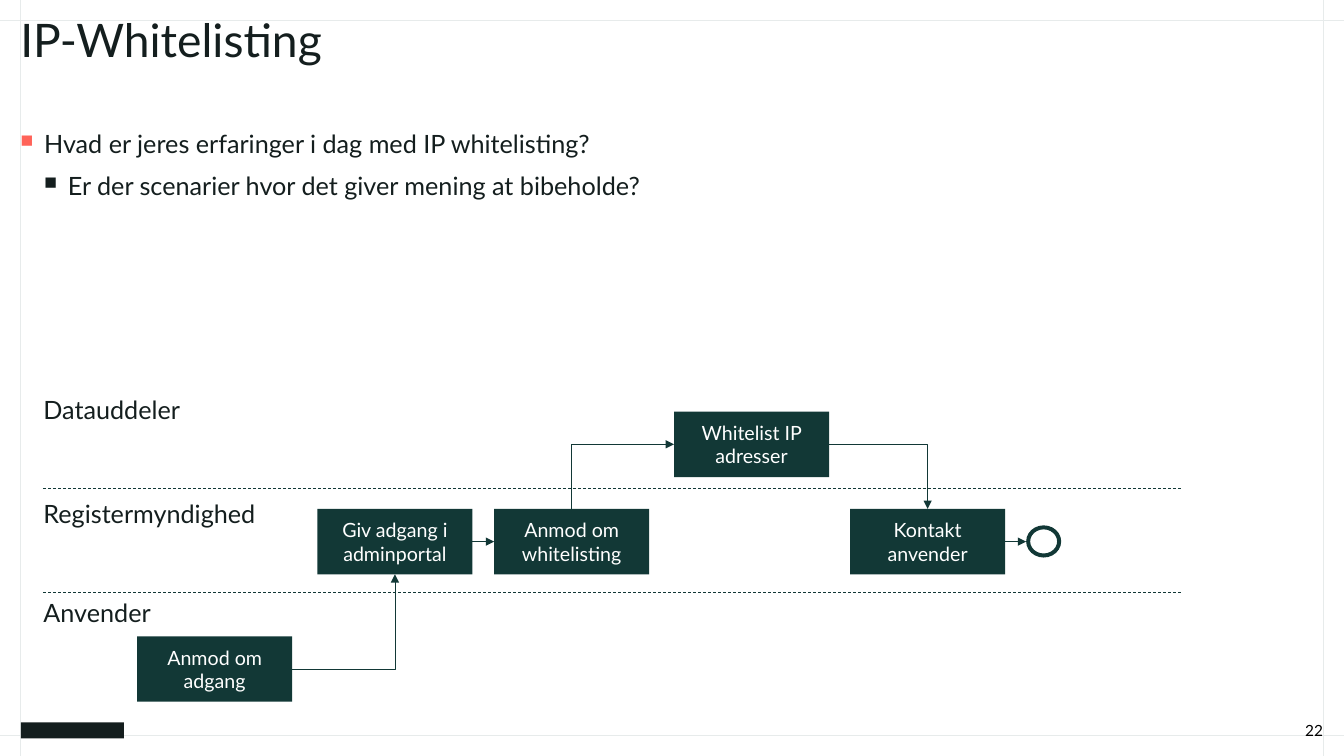
"""Build the IP-Whitelisting slide with its three-lane process flow."""
from dataclasses import dataclass

from lxml.etree import SubElement
from pptx import Presentation
from pptx.dml.color import RGBColor
from pptx.enum.dml import MSO_LINE
from pptx.enum.shapes import MSO_CONNECTOR, MSO_SHAPE
from pptx.enum.text import MSO_ANCHOR, PP_ALIGN
from pptx.oxml.ns import qn
from pptx.util import Pt


@dataclass(frozen=True)
class Theme:
    face: str = "Lato"
    ink: str = "141E1E"
    black: str = "000000"
    white: str = "FFFFFF"
    green: str = "123836"
    coral: str = "FF6359"
    guide: str = "E7EBEB"
    title: float = 33
    body: float = 18
    step: float = 14
    page: float = 11


theme = Theme()
deck = Presentation()
deck.slide_width, deck.slide_height = Pt(960), Pt(540)
slide = deck.slides.add_slide(deck.slide_layouts[6])
shapes = slide.shapes


def write(shape, lines, size, color, space=1.0, after=0, inset=(0, 0)):
    frame = shape.text_frame
    frame.word_wrap = True
    frame.margin_left = frame.margin_right = Pt(inset[0])
    frame.margin_top = frame.margin_bottom = Pt(inset[1])
    frame.text = "\n".join(lines)
    for para in frame.paragraphs:
        para.line_spacing, para.space_after = space, Pt(after)
        para.font.name, para.font.size = theme.face, Pt(size)
        para.font.color.rgb = RGBColor.from_string(color)
    return frame


def link(kind, ends, color, width=0.5, arrow=None):
    line = shapes.add_connector(kind, *[Pt(n) for n in ends])
    line.line.color.rgb = RGBColor.from_string(color)
    line.line.width = Pt(width)
    props = line._element.spPr
    SubElement(props, qn("a:effectLst"))
    if kind == MSO_CONNECTOR.ELBOW:
        props.find(qn("a:prstGeom")).set("prst", "bentConnector2")
    if arrow:
        SubElement(props.find(qn("a:ln")), qn(arrow), type="triangle")
    return line


for x in (14.75, 945):
    link(MSO_CONNECTOR.STRAIGHT, (x, 0, x, 540), theme.guide, 0.6)
for y in (14.75, 525.25):
    link(MSO_CONNECTOR.STRAIGHT, (0, y, 960, y), theme.guide, 0.6)

mark = shapes.add_shape(MSO_SHAPE.RECTANGLE, Pt(15), Pt(516), Pt(73.5), Pt(11.5))
mark.shadow.inherit = False
mark.fill.solid()
mark.fill.fore_color.rgb = RGBColor.from_string(theme.ink)
mark.line.fill.background()

title = shapes.add_textbox(Pt(14.5), Pt(14.5), Pt(931), Pt(75))
write(title, ["IP-Whitelisting"], theme.title, theme.ink, 0.83)

body = shapes.add_textbox(Pt(14.5), Pt(89.5), Pt(931), Pt(359))
points = write(body, ["Hvad er jeres erfaringer i dag med IP whitelisting?",
                      "Er der scenarier hvor det giver mening at bibeholde?"],
               theme.body, theme.ink, 1.1, 6)
for level, color in enumerate((theme.coral, theme.ink)):
    para = points.paragraphs[level]
    para.level = level
    props = para._p.get_or_add_pPr()
    props.set("marL", str(Pt(17 * (level + 1))))
    props.set("indent", str(Pt(-17)))
    font = props.find(qn("a:defRPr"))
    SubElement(SubElement(props, qn("a:buClr")), qn("a:srgbClr"), val=color)
    SubElement(props, qn("a:buSzPct"), val="70000")
    SubElement(props, qn("a:buChar"), char="■")
    props.append(font)

page = shapes.add_textbox(Pt(731.5), Pt(513), Pt(213.5), Pt(15))
foot = write(page, ["22"], theme.page, theme.black)
foot.vertical_anchor = MSO_ANCHOR.BOTTOM
foot.paragraphs[0].alignment = PP_ALIGN.RIGHT

for y in (349, 423.25):
    rule = link(MSO_CONNECTOR.STRAIGHT, (31, y, 845, y), theme.green)
    rule.line.dash_style = MSO_LINE.DASH
for name, y in (("Datauddeler", 279.5), ("Registermyndighed", 353.5),
                ("Anvender", 424.75)):
    lane = shapes.add_textbox(Pt(31), Pt(y), Pt(178), Pt(22))
    write(lane, [name], theme.body, theme.ink, 1.1, 6)

steps = []
for name, x, y in (("Anmod om adgang", 98, 454.5),
                   ("Giv adgang i adminportal", 226.75, 363.5),
                   ("Anmod om whitelisting", 353, 363.5),
                   ("Whitelist IP adresser", 481.5, 294),
                   ("Kontakt anvender", 607.25, 363.5)):
    step = shapes.add_shape(MSO_SHAPE.RECTANGLE, Pt(x), Pt(y), Pt(110.75), Pt(46.75))
    step.shadow.inherit = False
    step.fill.solid()
    step.fill.fore_color.rgb = RGBColor.from_string(theme.green)
    step.line.fill.background()
    text = write(step, [name], theme.step, theme.white, inset=(5.75, 2.9))
    text.vertical_anchor = MSO_ANCHOR.MIDDLE
    text.paragraphs[0].alignment = PP_ALIGN.CENTER
    steps.append(step)
ask, grant, order, listed, contact = steps

for kind, start, out, stop, into, arrow in (
        (MSO_CONNECTOR.ELBOW, ask, 3, grant, 2, "a:tailEnd"),
        (MSO_CONNECTOR.STRAIGHT, grant, 3, order, 1, "a:tailEnd"),
        (MSO_CONNECTOR.ELBOW, listed, 1, order, 0, "a:headEnd"),
        (MSO_CONNECTOR.ELBOW, listed, 3, contact, 0, "a:tailEnd")):
    flow = link(kind, (0, 0, 0, 0), theme.green, arrow=arrow)
    flow.begin_connect(start, out)
    flow.end_connect(stop, into)

ring = shapes.add_shape(MSO_SHAPE.DONUT, Pt(733), Pt(375.25), Pt(25), Pt(23))
ring.adjustments[0] = 0.125
ring.shadow.inherit = False
ring.fill.solid()
ring.fill.fore_color.rgb = RGBColor.from_string(theme.green)
ring.line.fill.background()
last = link(MSO_CONNECTOR.STRAIGHT, (718, 386.88, 733, 386.88), theme.green,
            arrow="a:tailEnd")
last.begin_connect(contact, 3)

deck.save("out.pptx")
